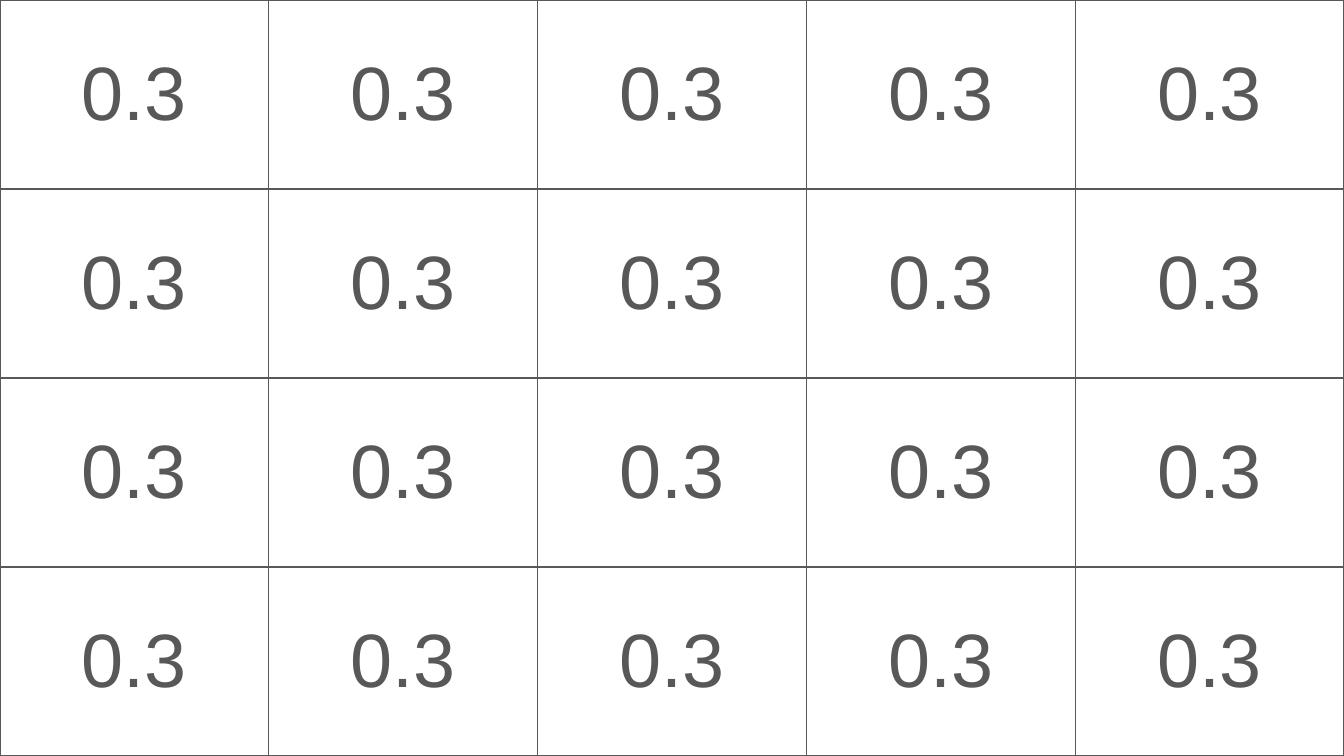
import pptx
import pptx.dml.color
import pptx.enum.text
import pptx.util
from lxml import etree
from pptx.oxml import ns

Pt = pptx.util.Pt
GREY = pptx.dml.color.RGBColor(0x58, 0x58, 0x58)
WIDE, HIGH = 960, 540
ROWS, COLS = 4, 5


def add_edges(cell, color, width):
    """Draw a solid line on all four sides of a cell."""
    props = cell._tc.get_or_add_tcPr()
    for side in ("a:lnL", "a:lnR", "a:lnT", "a:lnB"):
        line = etree.SubElement(props, ns.qn(side), w=str(Pt(width)))
        fill = etree.SubElement(line, ns.qn("a:solidFill"))
        etree.SubElement(fill, ns.qn("a:srgbClr"), val=str(color))


def fill_cell(cell, text):
    """Style one cell and put its number in the middle."""
    add_edges(cell, GREY, 1)
    cell.fill.background()
    cell.vertical_anchor = pptx.enum.text.MSO_ANCHOR.MIDDLE
    para = cell.text_frame.paragraphs[0]
    para.alignment = pptx.enum.text.PP_ALIGN.CENTER
    run = para.add_run()
    run.text = text
    run.font.name = "Arial"
    run.font.size = Pt(54)
    run.font.color.rgb = GREY


def add_grid(slide, left, top, width, height):
    """Fill the given box with an even table of numbers."""
    frame = slide.shapes.add_table(
        ROWS, COLS, Pt(left), Pt(top), Pt(width), Pt(height))
    table = frame.table
    table.first_row = False
    table.horz_banding = False
    for col in table.columns:
        col.width = Pt(width / COLS)
    for row in table.rows:
        row.height = Pt(height / ROWS)
    for cell in table.iter_cells():
        fill_cell(cell, "0.3")


def main():
    deck = pptx.Presentation()
    deck.slide_width, deck.slide_height = Pt(WIDE), Pt(HIGH)
    # Blank layout: the slide has no title
    slide = deck.slides.add_slide(deck.slide_layouts[6])
    # Number cards over the whole slide
    add_grid(slide, 0, 0, WIDE, HIGH)
    deck.save("out.pptx")


if __name__ == "__main__":
    main()
